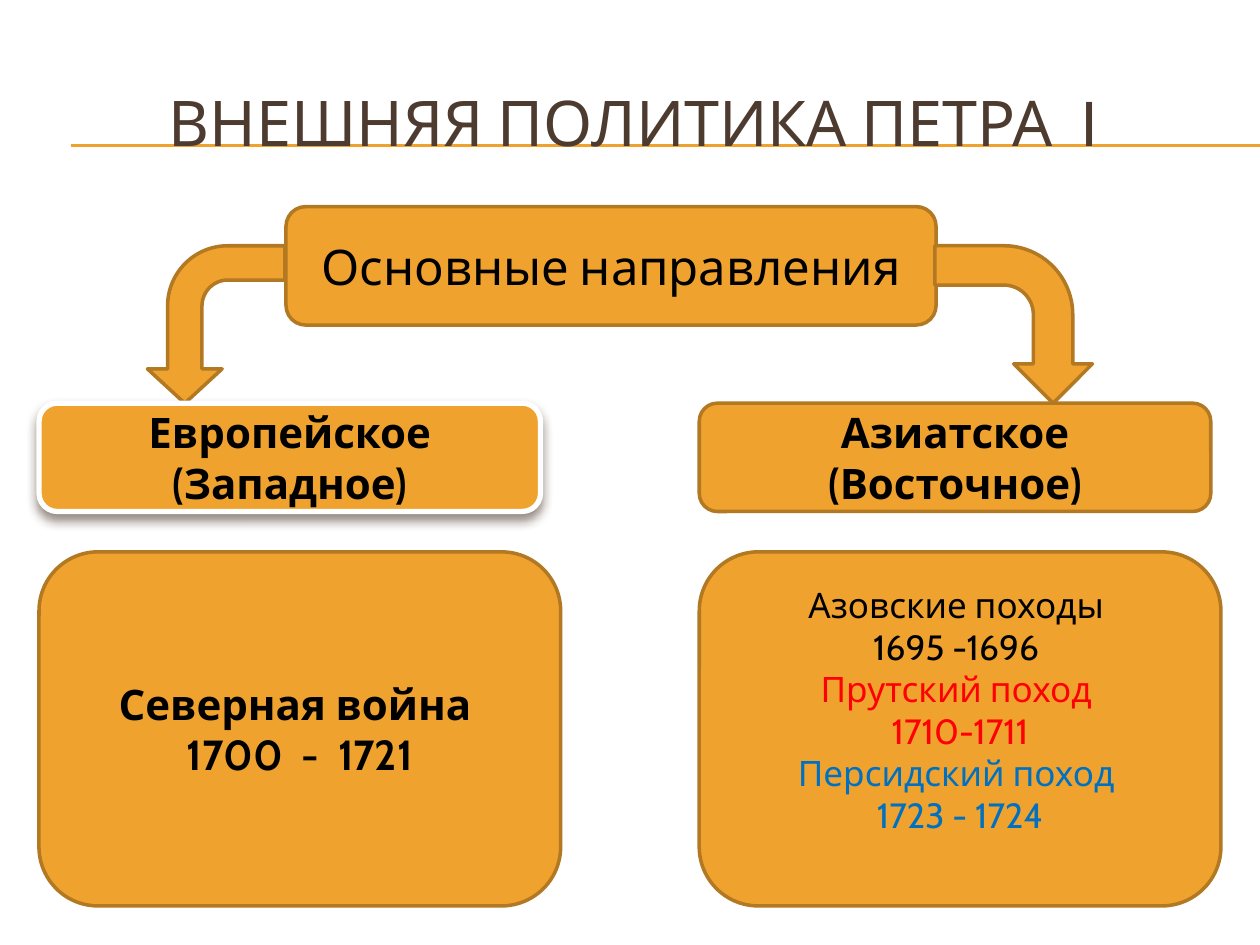
from dataclasses import dataclass

from lxml.etree import SubElement
from pptx import Presentation
from pptx.dml.color import RGBColor
from pptx.enum.shapes import MSO_CONNECTOR, MSO_SHAPE
from pptx.enum.text import MSO_ANCHOR, PP_ALIGN
from pptx.oxml.ns import qn
from pptx.util import Pt

PX = 9144  # 100 px to the inch


@dataclass(frozen=True)
class Theme:
    font: str = "Cabin"
    accent: str = "F0A22E"
    outline: str = "B27822"
    brown: str = "4E3B30"
    black: str = "000000"
    white: str = "FFFFFF"
    red: str = "FF0000"
    blue: str = "0070C0"
    title_size: int = 36
    heading_size: int = 28
    branch_size: int = 24
    list_size: int = 20


THEME = Theme()


@dataclass(frozen=True)
class Box:
    left: int
    top: int
    width: int
    height: int

    def emu(self) -> tuple:
        return tuple(v * PX for v in (self.left, self.top, self.width, self.height))


@dataclass(frozen=True)
class Line:
    text: str
    color: str = THEME.black


@dataclass(frozen=True)
class Panel:
    box: Box
    lines: tuple
    size: int
    bold: bool = False
    hanging: int = 0
    bottom_inset: int = 5
    raised: bool = False


@dataclass(frozen=True)
class BentArrow:
    box: Box
    head_width: float
    mirrored: bool = False


PANELS = (
    Panel(Box(227, 164, 516, 94), (Line("Основные направления"),), THEME.heading_size),
    Panel(Box(31, 320, 398, 86), (Line("Европейское"), Line("(Западное)")),
          THEME.branch_size, bold=True, raised=True),
    Panel(Box(555, 320, 406, 86), (Line("Азиатское"), Line("(Восточное)")),
          THEME.branch_size, bold=True),
    Panel(Box(31, 438, 414, 281), (Line("Северная война "), Line("1700  -  1721")),
          THEME.branch_size, bold=True),
    Panel(Box(555, 438, 414, 281),
          (Line("Азовские походы "), Line("1695 -1696 "),
           Line("Прутский поход ", THEME.red), Line("1710-1711", THEME.red),
           Line("Персидский поход ", THEME.blue), Line("1723 - 1724", THEME.blue)),
          THEME.list_size, hanging=50, bottom_inset=35),
)
ARROWS = (
    BentArrow(Box(742, 195, 125, 125), 0.25),
    BentArrow(Box(109, 203, 125, 109), 0.272, mirrored=True),
)


def write_text(shape, lines: tuple, *, size: int, bold: bool = False,
               hanging: int = 0, bottom_inset: int = 5) -> None:
    frame = shape.text_frame
    frame.word_wrap = True
    frame.vertical_anchor = MSO_ANCHOR.MIDDLE
    frame.margin_bottom = bottom_inset * PX
    for index, line in enumerate(lines):
        paragraph = frame.add_paragraph() if index else frame.paragraphs[0]
        paragraph.alignment = PP_ALIGN.CENTER
        if hanging:
            properties = paragraph._p.get_or_add_pPr()
            properties.set("marL", str(hanging * PX))
            properties.set("indent", str(-hanging * PX))
        run = paragraph.add_run()
        run.text = line.text
        run.font.name = THEME.font
        run.font.size = Pt(size)
        run.font.bold = bold
        run.font.color.rgb = RGBColor.from_string(line.color)


def add_filled_shape(slide, kind: MSO_SHAPE, box: Box):
    shape = slide.shapes.add_shape(kind, *box.emu())
    shape.shadow.inherit = False
    shape.fill.solid()
    shape.fill.fore_color.rgb = RGBColor.from_string(THEME.accent)
    shape.line.color.rgb = RGBColor.from_string(THEME.outline)
    shape.line.width = Pt(2)
    return shape


def raise_shape(shape) -> None:
    """Give the shape a white border and a soft shadow below."""
    shape.line.color.rgb = RGBColor.from_string(THEME.white)
    shape.line.width = Pt(3)
    effects = shape.element.spPr.find(qn("a:effectLst"))
    shadow = SubElement(effects, qn("a:outerShdw"), blurRad=str(Pt(6)),
                        dist=str(Pt(4)), dir="5400000", rotWithShape="0")
    color = SubElement(shadow, qn("a:srgbClr"), val=THEME.brown)
    SubElement(color, qn("a:alpha"), val="60000")


def add_panel(slide, panel: Panel) -> None:
    shape = add_filled_shape(slide, MSO_SHAPE.ROUNDED_RECTANGLE, panel.box)
    if panel.raised:
        raise_shape(shape)
    write_text(shape, panel.lines, size=panel.size, bold=panel.bold,
               hanging=panel.hanging, bottom_inset=panel.bottom_inset)


def add_bent_arrow(slide, arrow: BentArrow) -> None:
    shape = add_filled_shape(slide, MSO_SHAPE.BENT_ARROW, arrow.box)
    for index, value in enumerate((0.25, arrow.head_width, 0.25, 0.438)):
        shape.adjustments[index] = value
    shape.rotation = 90
    if arrow.mirrored:
        shape.element.spPr.find(qn("a:xfrm")).set("flipV", "1")


def add_rule(slide, top: int) -> None:
    rule = slide.shapes.add_connector(
        MSO_CONNECTOR.STRAIGHT, 56 * PX, top * PX, 1000 * PX, top * PX)
    rule.line.color.rgb = RGBColor.from_string(THEME.accent)
    rule.line.width = Pt(0.75)
    SubElement(rule.element.spPr, qn("a:effectLst"))


def add_title(slide, text: str, box: Box) -> None:
    title = slide.shapes.title
    title.left, title.top, title.width, title.height = box.emu()
    write_text(title, (Line(text, THEME.brown),), size=THEME.title_size)
    title.element.getparent().append(title.element)  # in front of the rules


def main() -> None:
    presentation = Presentation()
    presentation.slide_width = 1000 * PX
    presentation.slide_height = 750 * PX
    slide = presentation.slides.add_slide(presentation.slide_layouts[5])
    for top in (115, 116):
        add_rule(slide, top)
    add_title(slide, "ВНЕШНЯЯ ПОЛИТИКА ПЕТРА  I ", Box(33, 50, 950, 92))
    heading, *branches = PANELS
    add_panel(slide, heading)
    for arrow in ARROWS:
        add_bent_arrow(slide, arrow)
    for panel in branches:
        add_panel(slide, panel)
    presentation.save("out.pptx")


if __name__ == "__main__":
    main()
